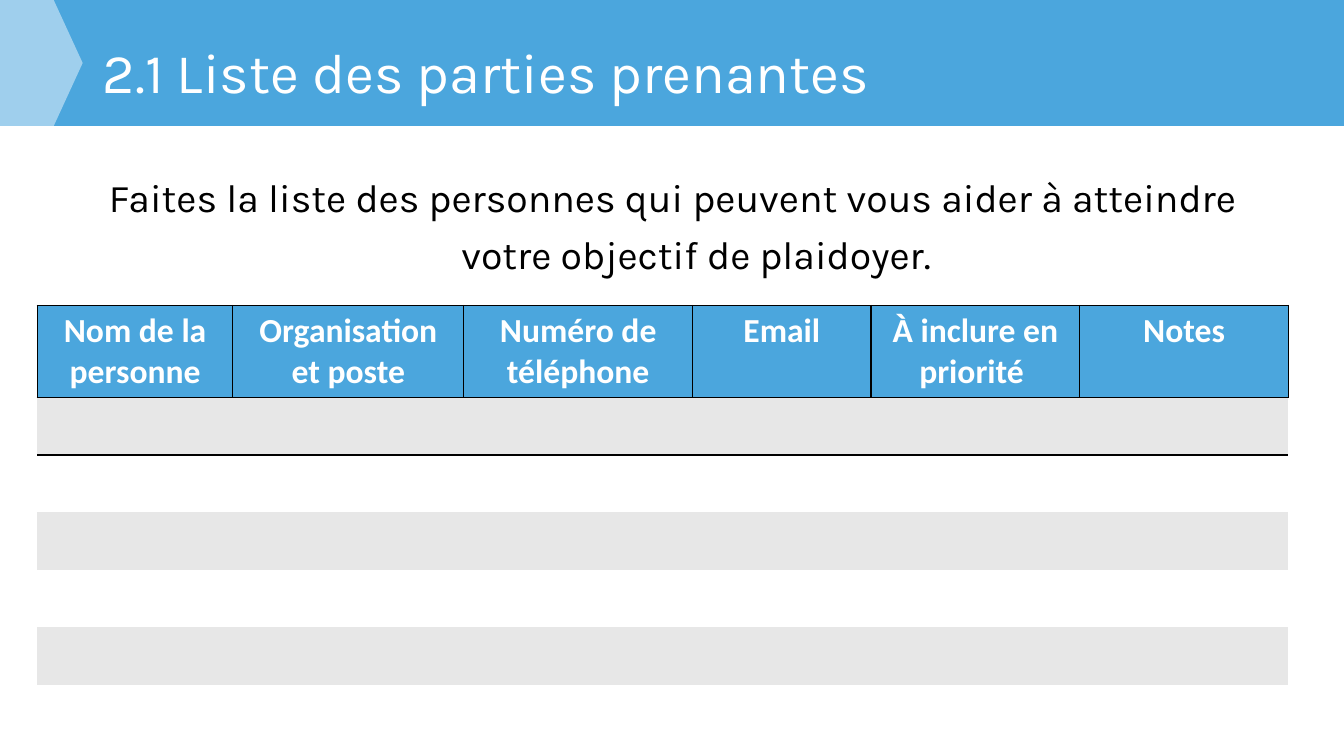
from lxml import etree
from pptx import Presentation
from pptx import util as u
from pptx.dml.color import RGBColor
from pptx.enum import shapes, text
from pptx.oxml.ns import qn

BLUE = RGBColor(0x4B, 0xA6, 0xDD)
WHITE = RGBColor(0xFF, 0xFF, 0xFF)
BLACK = RGBColor(0, 0, 0)
GREY = RGBColor(0xE7, 0xE7, 0xE7)
PLAIN = "{2D5ABB26-0587-4C30-8999-92F81FD0307C}"
HEADS = ["Nom de la personne", "Organisation et poste", "Numéro de téléphone",
         "Email", "À inclure en priorité ", "Notes"]
WIDTHS = [1.94, 2.29, 2.27, 1.77, 2.07, 2.07]


class Sheet:
    head = "Karla"
    grid = "Calibri"

    def __init__(self, slide):
        self.slide = slide

    def place(self, item, left, top, width, height):
        item.left, item.top = u.Inches(left), u.Inches(top)
        item.width, item.height = u.Inches(width), u.Inches(height)

    def label(self, para, words, face, size, color, align, bold=False):
        para.alignment = align
        run = para.add_run()
        run.text = words
        font = run.font
        font.name, font.size, font.bold = face, u.Pt(size), bold
        font.color.rgb = color

    def band(self, kind, width, height, color, alpha=None, point=None):
        shape = self.slide.shapes.add_shape(
            kind, 0, 0, u.Inches(width), u.Inches(height))
        shape.shadow.inherit = False
        shape.line.fill.background()
        shape.fill.solid()
        shape.fill.fore_color.rgb = color
        if point is not None:
            shape.adjustments[0] = point
        if alpha is not None:
            tone = next(shape.element.iter(qn("a:srgbClr")))
            etree.SubElement(tone, qn("a:alpha"), val=str(alpha * 1000))
        self.slide.shapes.title.element.addprevious(shape.element)

    def title(self, words):
        box = self.slide.shapes.title
        self.place(box, 0.92, 0.32, 10.58, 0.86)
        frame = box.text_frame
        frame.auto_size = text.MSO_AUTO_SIZE.NONE
        frame.vertical_anchor = text.MSO_ANCHOR.MIDDLE
        para = frame.paragraphs[0]
        para.line_spacing = 0.9
        self.label(para, words, self.head, 40, WHITE, text.PP_ALIGN.LEFT)

    def body(self, words):
        box = self.slide.placeholders[1]
        self.place(box, 0.92, 1.58, 11.5, 5.17)
        frame = box.text_frame
        frame.auto_size = text.MSO_AUTO_SIZE.NONE
        para = frame.paragraphs[0]
        para.line_spacing = 1.2
        para.space_before = u.Pt(0)
        props = para._p.get_or_add_pPr()
        props.set("marL", str(u.Inches(0.56)))
        props.set("indent", str(-u.Inches(0.56)))
        etree.SubElement(props, qn("a:buNone"))
        self.label(para, words, self.head, 28, BLACK, text.PP_ALIGN.CENTER)

    def border(self, cell, sides):
        props = cell._tc.get_or_add_tcPr()
        for spot, side in enumerate(sides):
            line = etree.Element(qn("a:ln" + side), w=str(u.Pt(1)))
            fill = etree.SubElement(line, qn("a:solidFill"))
            etree.SubElement(fill, qn("a:srgbClr"), val=str(BLACK))
            props.insert(spot, line)

    def table(self, heads, widths, left, top, first, height, count):
        frame = self.slide.shapes.add_table(
            count + 1, len(heads), u.Inches(left), u.Inches(top),
            u.Inches(sum(widths)), u.Inches(first + count * height))
        table = frame.table
        next(table._tbl.iter(qn("a:tableStyleId"))).text = PLAIN
        for col, width in zip(table.columns, widths):
            col.width = u.Inches(width)
        for index, row in enumerate(table.rows):
            row.height = u.Inches(height if index else first)
            for cell, words in zip(row.cells, heads):
                cell.fill.solid()
                if index:
                    cell.fill.fore_color.rgb = GREY if index % 2 else WHITE
                    if index == 1:
                        self.border(cell, "T")
                    continue
                cell.fill.fore_color.rgb = BLUE
                self.border(cell, "LRTB")
                self.label(cell.text_frame.paragraphs[0], words, self.grid,
                           24, WHITE, text.PP_ALIGN.CENTER, True)


def main():
    deck = Presentation()
    deck.slide_width, deck.slide_height = u.Inches(13.33), u.Inches(7.5)
    sheet = Sheet(deck.slides.add_slide(deck.slide_layouts[1]))
    kinds = shapes.MSO_SHAPE
    sheet.band(kinds.RECTANGLE, 13.33, 1.25, BLUE)
    sheet.band(kinds.PENTAGON, 0.82, 1.25, WHITE, alpha=47, point=0.35)
    sheet.title("2.1 Liste des parties prenantes")
    sheet.body("Faites la liste des personnes qui peuvent vous aider "
               "à atteindre votre objectif de plaidoyer. ")
    sheet.table(HEADS, WIDTHS, 0.37, 3.03, 0.91, 0.57, 5)
    deck.save("out.pptx")


if __name__ == "__main__":
    main()
